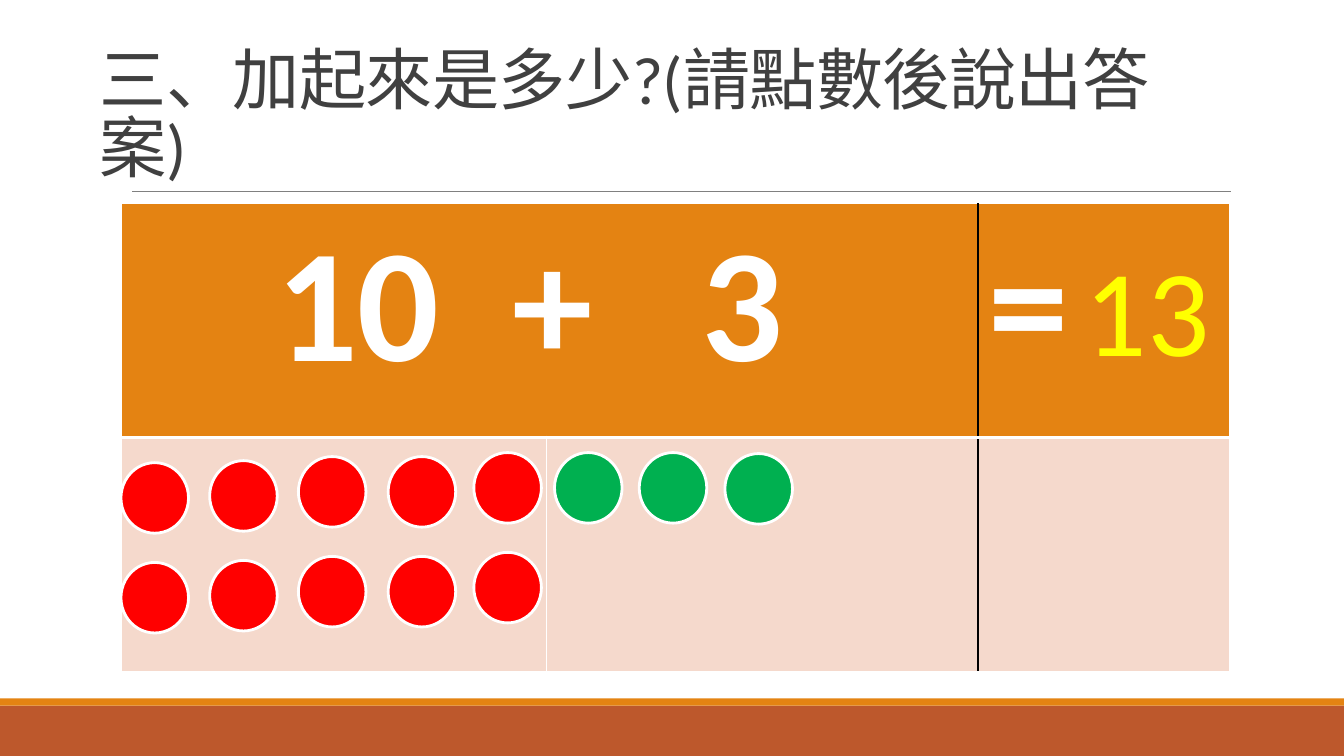
from lxml import etree
from pptx import Presentation
from pptx.dml.color import RGBColor
from pptx.enum import shapes, text
from pptx.oxml.ns import qn
from pptx.util import Inches, Pt

WHITE = RGBColor(0xFF, 0xFF, 0xFF)
BLACK = RGBColor(0, 0, 0)
ORANGE = RGBColor(0xE4, 0x83, 0x12)
RUST = RGBColor(0xBD, 0x58, 0x2C)
PINK = RGBColor(0xF5, 0xD9, 0xCC)
RED = RGBColor(0xFF, 0, 0)
GREEN = RGBColor(0, 0xB0, 0x50)
YELLOW = RGBColor(0xFF, 0xFF, 0)
GREY = RGBColor(0x80, 0x80, 0x80)
DARK = RGBColor(0x40, 0x40, 0x40)

RED_DOTS = [(1.2, 4.59), (2.08, 4.57), (2.96, 4.53), (3.85, 4.53), (4.7, 4.49)]
GREEN_DOTS = [(5.5, 4.49), (6.34, 4.49), (7.19, 4.5)]
DOT_ROW_STEP = 0.99


def add_run(p, words, size, color, bold=False):
    r = p.add_run()
    r.text = words
    r.font.name = "Calibri"
    r.font.size = Pt(size)
    r.font.bold = bold
    r.font.color.rgb = color
    return r


def add_text(s, box, words, size, color):
    tf = s.shapes.add_textbox(*map(Inches, box)).text_frame
    tf.word_wrap = True
    return tf, add_run(tf.paragraphs[0], words, size, color)


def add_filled(s, kind, box, fill, outline=None):
    sp = s.shapes.add_shape(kind, *map(Inches, box))
    sp.shadow.inherit = False
    sp.fill.solid()
    sp.fill.fore_color.rgb = fill
    if outline is None:
        sp.line.fill.background()
    else:
        sp.line.color.rgb = outline
        sp.line.width = Pt(2)


def add_rule(s, x1, x2, y):
    line = s.shapes.add_connector(shapes.MSO_CONNECTOR.STRAIGHT,
                                  Inches(x1), Inches(y), Inches(x2), Inches(y))
    line.line.color.rgb = GREY
    line.line.width = Pt(0.5)
    etree.SubElement(line._element.spPr, qn("a:effectLst"))


def style_cell(cell, fill, left=WHITE, right=WHITE, bottom=1):
    """Draw the four borders, then the fill, in the order the schema wants."""
    tcPr = cell._tc.get_or_add_tcPr()
    for side, color, width in (("L", left, 1), ("R", right, 1),
                               ("T", WHITE, 1), ("B", WHITE, bottom)):
        ln = etree.SubElement(tcPr, qn(f"a:ln{side}"), w=str(Pt(width)))
        solid = etree.SubElement(ln, qn("a:solidFill"))
        etree.SubElement(solid, qn("a:srgbClr"), val=str(color))
    cell.fill.solid()
    cell.fill.fore_color.rgb = fill


def set_tabs(p, *stops):
    tabs = etree.SubElement(p._p.get_or_add_pPr(), qn("a:tabLst"))
    for stop in stops:
        etree.SubElement(tabs, qn("a:tab"), pos=str(Inches(stop)), algn="l")


def add_sum_table(s):
    table = s.shapes.add_table(2, 3, Inches(1.2), Inches(2.02),
                               Inches(11), Inches(4.64)).table
    for column, width in zip(table.columns, (4.22, 4.28, 2.5)):
        column.width = Inches(width)
    for row, (fill, bottom) in enumerate(((ORANGE, 3), (PINK, 1))):
        table.rows[row].height = Inches(2.32)
        style_cell(table.cell(row, 0), fill, bottom=bottom)
        style_cell(table.cell(row, 1), fill, right=BLACK, bottom=bottom)
        style_cell(table.cell(row, 2), fill, left=BLACK, bottom=bottom)

    addends = table.cell(0, 0)
    addends.merge(table.cell(0, 1))
    addends.margin_left = Inches(1.54)
    p = addends.text_frame.paragraphs[0]
    set_tabs(p, 2.34, 4.22)
    add_run(p, "10\t+\t3", 115, WHITE, bold=True)
    add_run(table.cell(0, 2).text_frame.paragraphs[0], "=", 115, WHITE, bold=True)


def add_dots(s, places, color):
    for x, y in places:
        add_filled(s, shapes.MSO_SHAPE.OVAL, (x, y, 0.67, 0.7), color, WHITE)


def main():
    prs = Presentation()
    prs.slide_width, prs.slide_height = Inches(13.33), Inches(7.5)
    s = prs.slides.add_slide(prs.slide_layouts[6])

    add_filled(s, shapes.MSO_SHAPE.RECTANGLE, (0, 7, 13.33, 0.5), RUST)
    add_filled(s, shapes.MSO_SHAPE.RECTANGLE, (0, 6.93, 13.33, 0.07), ORANGE)
    add_rule(s, 1.31, 12.21, 1.9)

    tf, r = add_text(s, (0.89, 0.31, 11.31, 1.59),
                     "三、加起來是多少?(請點數後說出答案)", 48, DARK)
    tf.vertical_anchor = text.MSO_ANCHOR.BOTTOM
    tf.paragraphs[0].line_spacing = 0.85
    r.font._element.set("spc", "-50")

    add_sum_table(s)
    add_dots(s, RED_DOTS, RED)
    add_dots(s, [(x, y + DOT_ROW_STEP) for x, y in RED_DOTS], RED)
    add_dots(s, GREEN_DOTS, GREEN)

    tf, _ = add_text(s, (10.63, 2.27, 1.5, 1.58), "13", 88, YELLOW)
    tf.auto_size = text.MSO_AUTO_SIZE.SHAPE_TO_FIT_TEXT
    tf.paragraphs[0].alignment = text.PP_ALIGN.CENTER

    prs.save("out.pptx")


if __name__ == "__main__":
    main()
